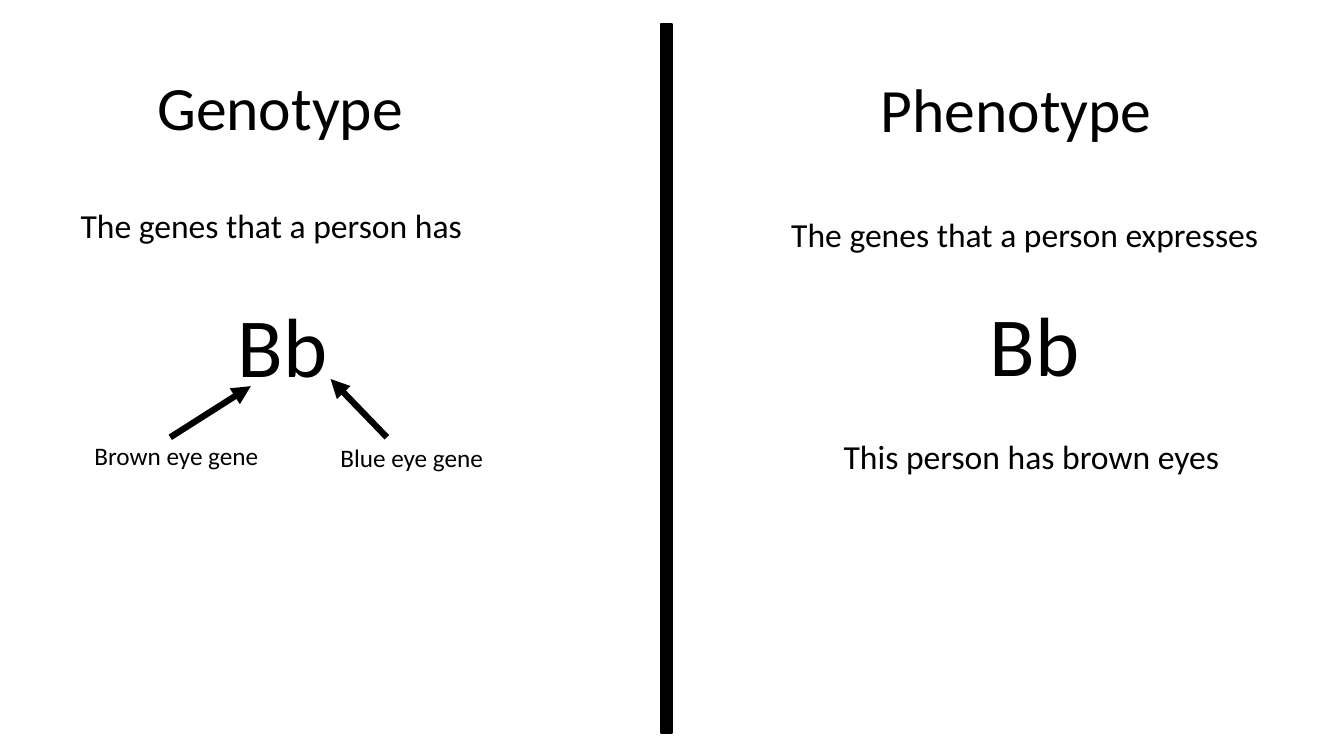
from dataclasses import dataclass

import pptx
import pptx.dml.color
import pptx.enum.shapes
import pptx.enum.text
import pptx.oxml.ns
import pptx.util
from lxml import etree

Cm = pptx.util.Cm
Pt = pptx.util.Pt
Align = pptx.enum.text.PP_ALIGN
Anchor = pptx.enum.text.MSO_ANCHOR

BLACK = pptx.dml.color.RGBColor(0, 0, 0)
WHITE = pptx.dml.color.RGBColor(255, 255, 255)
FONT = "Calibri"


@dataclass
class Label:
    text: str
    left: float
    top: float
    width: float
    height: float
    size: int


@dataclass
class Arrow:
    x1: float
    y1: float
    x2: float
    y2: float


HEADINGS = [
    Label("Genotype ", 2.74, 0.94, 9, 3.68, 44),
    Label("Phenotype ", 21.29, 0.99, 9, 3.68, 44),
]
LABELS = [
    Label("The genes that a person has", 1.78, 5.05, 11.8, 1.28, 24),
    Label("Bb", 5.74, 7.26, 4.25, 2.82, 60),
    Label("Brown eye gene", 2.13, 10.97, 5.18, 1.03, 18),
    Label("Blue eye gene", 8.33, 11.02, 5.18, 1.03, 18),
    Label("The genes that a person expresses", 19.69, 5.26, 13.41, 1.28, 24),
    Label("Bb", 24.69, 7.24, 4.25, 2.82, 60),
    Label("This person has brown eyes", 21.01, 10.85, 10.77, 1.28, 24),
]
GENE_ARROWS = [
    Arrow(4.29, 11.02, 6.32, 9.73),
    Arrow(9.75, 11.02, 8.33, 9.55),
]


def add_label(slide, label: Label, *, align=Align.LEFT, anchor=Anchor.TOP,
              line_spacing: float = 1.0) -> None:
    box = slide.shapes.add_textbox(Cm(label.left), Cm(label.top),
                                   Cm(label.width), Cm(label.height))
    tf = box.text_frame
    tf.word_wrap = True
    tf.vertical_anchor = anchor
    p = tf.paragraphs[0]
    p.alignment = align
    p.line_spacing = line_spacing
    r = p.add_run()
    r.text = label.text
    r.font.name = FONT
    r.font.size = Pt(label.size)
    r.font.color.rgb = BLACK


def add_divider(slide) -> None:
    sp = slide.shapes.add_shape(pptx.enum.shapes.MSO_SHAPE.RECTANGLE,
                                Cm(16.66), Cm(0.61), Cm(0.28), Cm(17.86))
    sp.shadow.inherit = False
    sp.fill.solid()
    sp.fill.fore_color.rgb = BLACK
    sp.line.color.rgb = BLACK
    sp.line.width = Pt(1)


def add_arrow(slide, arrow: Arrow) -> None:
    line = slide.shapes.add_connector(
        pptx.enum.shapes.MSO_CONNECTOR.STRAIGHT,
        Cm(arrow.x1), Cm(arrow.y1), Cm(arrow.x2), Cm(arrow.y2))
    line.line.color.rgb = BLACK
    line.line.width = Pt(4.5)
    qn = pptx.oxml.ns.qn
    etree.SubElement(line.line._get_or_add_ln(), qn("a:tailEnd"), type="triangle")
    etree.SubElement(line._element.spPr, qn("a:effectLst"))


def main() -> None:
    prs = pptx.Presentation()
    prs.slide_width, prs.slide_height = Cm(33.87), Cm(19.05)
    slide = prs.slides.add_slide(prs.slide_layouts[6])
    slide.background.fill.solid()
    slide.background.fill.fore_color.rgb = WHITE

    for heading in HEADINGS:
        add_label(slide, heading, align=Align.CENTER, anchor=Anchor.MIDDLE,
                  line_spacing=0.9)
    add_divider(slide)
    for label in LABELS:
        add_label(slide, label)
    for arrow in GENE_ARROWS:
        add_arrow(slide, arrow)

    prs.save("out.pptx")


if __name__ == "__main__":
    main()
